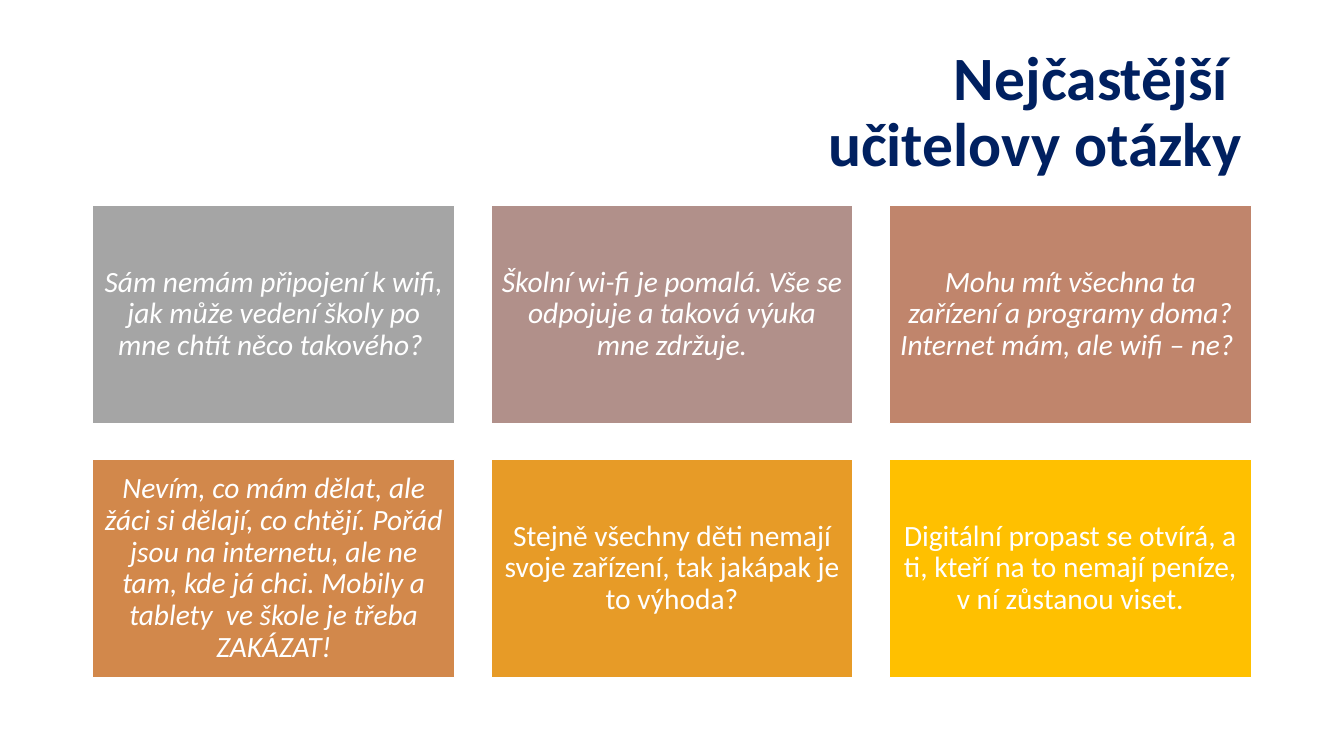
from dataclasses import dataclass

from pptx import Presentation
from pptx.dml.color import RGBColor
from pptx.enum.shapes import MSO_SHAPE
from pptx.enum.text import MSO_ANCHOR, PP_ALIGN
from pptx.slide import Slide
from pptx.text.text import Font
from pptx.util import Inches, Pt

COLUMNS = 3
LEFT, TOP = 0.92, 2.04
CARD_WIDTH, CARD_HEIGHT = 3.59, 2.16
GAP = 0.36
INSET = 0.09
WHITE = "FFFFFF"
NAVY = "002060"
TITLE_LINES = ("Nejčastější ", "učitelovy otázky")


@dataclass(frozen=True)
class Question:
    text: str
    fill: str
    italic: bool = True


QUESTIONS = (
    Question("Sám nemám připojení k wifi, jak může vedení školy po mne chtít něco takového? ", "A5A5A5"),
    Question("Školní wi-fi je pomalá. Vše se odpojuje a taková výuka mne zdržuje.", "B1908A"),
    Question("Mohu mít všechna ta zařízení a programy doma? Internet mám, ale wifi – ne? ", "C0856C"),
    Question(
        "Nevím, co mám dělat, ale žáci si dělají, co chtějí. Pořád jsou na internetu, "
        "ale ne tam, kde já chci. Mobily a tablety  ve škole je třeba ZAKÁZAT!",
        "D2884B",
    ),
    Question("Stejně všechny děti nemají svoje zařízení, tak jakápak je to výhoda?", "E79B27", False),
    Question("Digitální propast se otvírá, a ti, kteří na to nemají peníze, v ní zůstanou viset.", "FFC000", False),
)


def color(value: str) -> RGBColor:
    return RGBColor.from_string(value)


def style_font(font: Font, size: float, value: str, bold: bool = False, italic: bool = False) -> None:
    font.name = "Calibri"
    font.size = Pt(size)
    font.color.rgb = color(value)
    font.bold = bold
    font.italic = italic


def add_title(page: Slide) -> None:
    box = page.shapes.add_textbox(Inches(LEFT), Inches(0.4), Inches(11.5), Inches(1.45))
    frame = box.text_frame
    frame.word_wrap = True
    frame.vertical_anchor = MSO_ANCHOR.MIDDLE
    para = frame.paragraphs[0]
    para.alignment = PP_ALIGN.RIGHT
    para.line_spacing = 0.9
    for index, line in enumerate(TITLE_LINES):
        if index:
            para.add_line_break()
        span = para.add_run()
        span.text = line
        style_font(span.font, 44, NAVY, bold=True)


def add_question(page: Slide, question: Question, left: float, top: float) -> None:
    card = page.shapes.add_shape(
        MSO_SHAPE.RECTANGLE, Inches(left), Inches(top), Inches(CARD_WIDTH), Inches(CARD_HEIGHT)
    )
    card.shadow.inherit = False
    card.fill.solid()
    card.fill.fore_color.rgb = color(question.fill)
    card.line.color.rgb = color(WHITE)
    card.line.width = Pt(1)
    frame = card.text_frame
    frame.word_wrap = True
    frame.vertical_anchor = MSO_ANCHOR.MIDDLE
    frame.margin_left = frame.margin_right = Inches(INSET)
    frame.margin_top = frame.margin_bottom = Inches(INSET)
    para = frame.paragraphs[0]
    para.alignment = PP_ALIGN.CENTER
    para.line_spacing = 0.9
    span = para.add_run()
    span.text = question.text
    style_font(span.font, 21, WHITE, italic=question.italic)


def main() -> None:
    deck = Presentation()
    deck.slide_width = Inches(13.33)
    deck.slide_height = Inches(7.5)
    page = deck.slides.add_slide(deck.slide_layouts[6])
    add_title(page)
    for index, question in enumerate(QUESTIONS):
        row, column = divmod(index, COLUMNS)
        left = LEFT + column * (CARD_WIDTH + GAP)
        top = TOP + row * (CARD_HEIGHT + GAP)
        add_question(page, question, left, top)
    deck.save("out.pptx")


if __name__ == "__main__":
    main()
